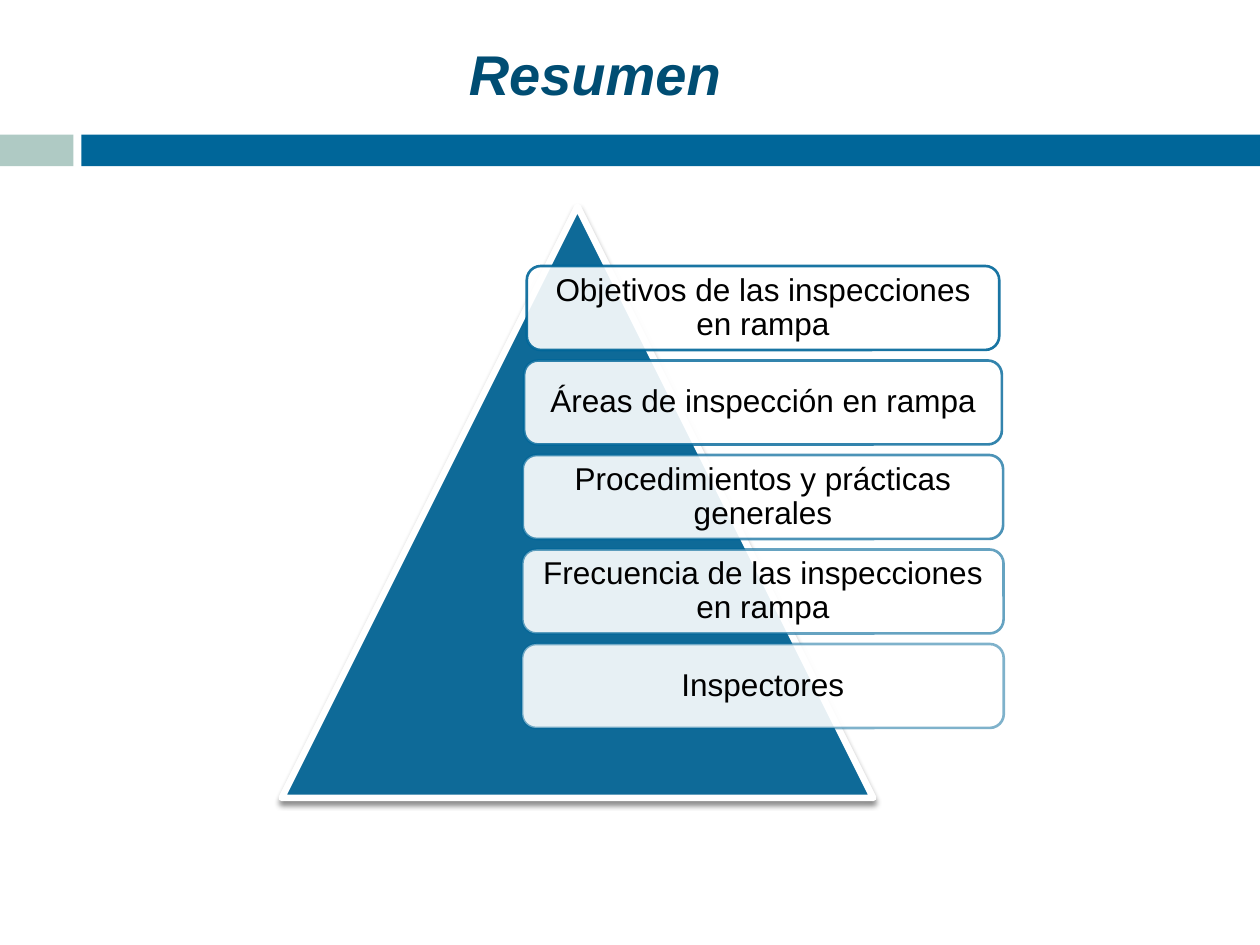
from lxml.etree import SubElement
from pptx import Presentation
from pptx.dml.color import RGBColor
from pptx.enum.shapes import MSO_SHAPE
from pptx.enum.text import MSO_ANCHOR, MSO_AUTO_SIZE, PP_ALIGN
from pptx.oxml.ns import qn
from pptx.util import Pt

COLORS = {
    "title": "004D73",
    "blue": "006699",
    "sage": "AFCAC4",
    "white": "FFFFFF",
    "black": "000000",
}
TITLE_FONT = {"name": "Arial", "size": Pt(32), "bold": True, "italic": True}
TOPIC_FONT = {"name": "Arial", "size": Pt(18)}
TITLE_FRAME = {
    "word_wrap": True,
    "auto_size": MSO_AUTO_SIZE.NONE,
    "vertical_anchor": MSO_ANCHOR.MIDDLE,
}
TOPIC_FRAME = {
    **TITLE_FRAME,
    "margin_left": Pt(5),
    "margin_right": Pt(5),
    "margin_top": Pt(5),
    "margin_bottom": Pt(5),
}
TOPICS = [
    ("Objetivos de las inspecciones en rampa", 270),
    ("Áreas de inspección en rampa", 273),
    ("Procedimientos y prácticas generales", 274.5),
    ("Frecuencia de las inspecciones en rampa", 275),
    ("Inspectores", 275.25),
]
TOPIC_CENTER, TOPIC_TOP, TOPIC_HEIGHT, TOPIC_STEP = 436, 152, 48, 54


def rgb(color):
    return RGBColor.from_string(COLORS[color])


def set_attrs(obj, values):
    for name, value in values.items():
        setattr(obj, name, value)


def set_alpha(parent, percent):
    clr = parent.find(qn("a:solidFill")).find(qn("a:srgbClr"))
    SubElement(clr, qn("a:alpha"), val=str(percent * 1000))


def write_text(tf, text, frame, font, color):
    set_attrs(tf, frame)
    p = tf.paragraphs[0]
    p.alignment = PP_ALIGN.CENTER
    r = p.add_run()
    r.text = text
    set_attrs(r.font, font)
    r.font.color.rgb = rgb(color)
    return p


def add_shape(s, kind, box, fill, line=None, width=0):
    sp = s.shapes.add_shape(kind, *map(Pt, box))
    sp.fill.solid()
    sp.fill.fore_color.rgb = rgb(fill)
    if line:
        sp.line.color.rgb = rgb(line)
        sp.line.width = Pt(width)
    else:
        sp.line.fill.background()
    sp.shadow.inherit = False
    return sp


def add_title(s, text):
    sp = s.shapes.title
    set_attrs(sp, {"left": Pt(19), "top": Pt(18), "width": Pt(642), "height": Pt(48)})
    write_text(sp.text_frame, text, TITLE_FRAME, TITLE_FONT, "title")


def add_pyramid(s):
    sp = add_shape(s, MSO_SHAPE.ISOSCELES_TRIANGLE, (161, 118, 338, 338),
                   "blue", "white", 3.75)
    spPr = sp.element.spPr
    set_alpha(spPr, 90)
    SubElement(spPr.find(qn("a:ln")), qn("a:round"))
    shadow = SubElement(spPr.find(qn("a:effectLst")), qn("a:outerShdw"),
                        blurRad=str(Pt(3)), dist=str(Pt(2.4)),
                        dir=str(90 * 60000), rotWithShape="0")
    clr = SubElement(shadow, qn("a:srgbClr"), val=COLORS["black"])
    SubElement(clr, qn("a:alpha"), val="45000")


def add_topic(s, index, text, width):
    box = (TOPIC_CENTER - width / 2, TOPIC_TOP + index * TOPIC_STEP,
           width, TOPIC_HEIGHT)
    sp = add_shape(s, MSO_SHAPE.ROUNDED_RECTANGLE, box, "white", "blue", 1.5)
    spPr = sp.element.spPr
    set_alpha(spPr, 90)
    set_alpha(spPr.find(qn("a:ln")), 90 - 10 * index)
    p = write_text(sp.text_frame, text, TOPIC_FRAME, TOPIC_FONT, "black")
    p.line_spacing = 0.9


def main():
    prs = Presentation()
    prs.slide_width, prs.slide_height = Pt(720), Pt(540)
    s = prs.slides.add_slide(prs.slide_layouts[5])
    add_shape(s, MSO_SHAPE.RECTANGLE, (0, 77, 42, 18), "sage")
    add_shape(s, MSO_SHAPE.RECTANGLE, (46.5, 77, 673.5, 18), "blue")
    add_title(s, "Resumen")
    add_pyramid(s)
    for index, (text, width) in enumerate(TOPICS):
        add_topic(s, index, text, width)
    prs.save("out.pptx")


if __name__ == "__main__":
    main()
